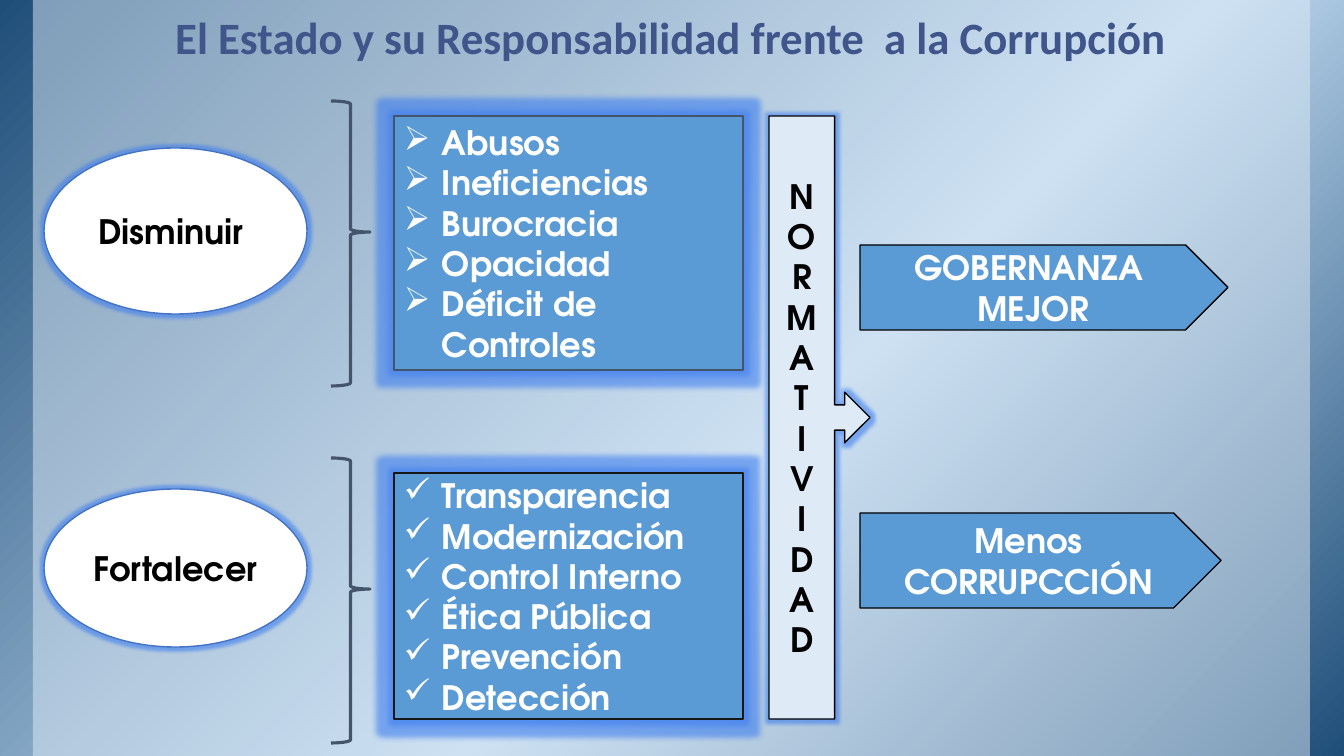
from dataclasses import dataclass

from lxml.etree import SubElement
from pptx import Presentation
from pptx.dml.color import RGBColor
from pptx.enum.shapes import MSO_SHAPE as Shape
from pptx.enum.text import MSO_ANCHOR as Anchor, PP_ALIGN as Align
from pptx.oxml import parse_xml
from pptx.oxml.ns import nsdecls, qn
from pptx.util import Pt

EMU_PER_PX = 914400 / 100.8
WIDTH, HEIGHT = 1344, 756


def px(length):
    return round(length * EMU_PER_PX)


@dataclass(frozen=True)
class Theme:
    title_font: str = "Calibri"
    body_font: str = "TeX Gyre Adventor"
    title_size: int = 32
    body_size: int = 24
    title: str = "40558A"
    navy: str = "1F4E79"
    sky: str = "BDD7EE"
    pale: str = "DEEBF7"
    blue: str = "5B9BD5"
    slate: str = "44546A"
    outline: str = "4472C4"
    glow: str = "3F7FEF"
    ink: str = "181717"
    black: str = "000000"
    white: str = "FFFFFF"


class SlideBuilder:
    def __init__(self, slide, theme):
        self.slide = slide
        self.theme = theme

    def shape(self, kind, box, fill=None, line=None, line_width=1, glow=0):
        shape = self.slide.shapes.add_shape(kind, *map(px, box))
        shape.shadow.inherit = False
        if fill:
            shape.fill.solid()
            shape.fill.fore_color.rgb = RGBColor.from_string(fill)
        else:
            shape.fill.background()
        if line:
            shape.line.color.rgb = RGBColor.from_string(line)
            shape.line.width = Pt(line_width)
        else:
            shape.line.fill.background()
        if glow:
            effects = shape._element.spPr.find(qn("a:effectLst"))
            halo = SubElement(effects, qn("a:glow"), rad=str(Pt(glow)))
            color = SubElement(halo, qn("a:srgbClr"), val=self.theme.glow)
            SubElement(color, qn("a:alpha"), val="60000")
        return shape

    def label(self, shape, text, color, bullet=None):
        """Fill a shape with bold text, centred unless it is a bulleted list."""
        frame = shape.text_frame
        frame.word_wrap = True
        frame.vertical_anchor = Anchor.MIDDLE
        frame.text = text
        for paragraph in frame.paragraphs:
            paragraph.alignment = Align.LEFT if bullet else Align.CENTER
            if bullet:
                properties = paragraph._p.get_or_add_pPr()
                properties.set("marL", str(px(38)))
                properties.set("indent", str(px(-38)))
                SubElement(properties, qn("a:buChar"), char=bullet)
            for run in paragraph.runs:
                self.style(run, self.theme.body_font, self.theme.body_size, color)

    def style(self, run, font, size, color):
        run.font.name = font
        run.font.size = Pt(size)
        run.font.bold = True
        run.font.color.rgb = RGBColor.from_string(color)

    def backdrop(self):
        theme = self.theme
        base = self.shape(Shape.RECTANGLE, (0, 0, WIDTH, HEIGHT), theme.navy)
        stops = "".join(
            f'<a:gs pos="{position}"><a:srgbClr val="{color}"/></a:gs>'
            for position, color in ((0, theme.navy), (58000, theme.sky), (100000, theme.navy)))
        gradient = parse_xml(
            f'<a:gradFill {nsdecls("a")} rotWithShape="1"><a:gsLst>{stops}</a:gsLst>'
            '<a:lin ang="2700000" scaled="0"/></a:gradFill>')
        properties = base._element.spPr
        properties.replace(properties.find(qn("a:solidFill")), gradient)
        veil = self.shape(Shape.RECTANGLE, (33, 0, 1277, HEIGHT), theme.pale)
        color = veil._element.spPr.find(qn("a:solidFill"))[0]
        SubElement(color, qn("a:alpha"), val="50000")

    def title(self, text, box):
        title = self.slide.shapes.title
        title.left, title.top, title.width, title.height = map(px, box)
        frame = title.text_frame
        frame.text = text
        frame.word_wrap = True
        frame.vertical_anchor = Anchor.TOP
        paragraph = frame.paragraphs[0]
        paragraph.alignment = Align.CENTER
        self.style(paragraph.runs[0], self.theme.title_font,
                   self.theme.title_size, self.theme.title)
        # Bring the title in front of the backdrop
        self.slide.shapes._spTree.append(title._element)

    def goal(self, text, box):
        oval = self.shape(Shape.OVAL, box, self.theme.white, self.theme.outline, glow=5)
        self.label(oval, text, self.theme.black)

    def brace(self, box):
        brace = self.shape(Shape.RIGHT_BRACE, box, line=self.theme.slate, line_width=2.25)
        brace.adjustments[0] = 0.08
        brace.adjustments[1] = 0.46

    def checklist(self, items, bullet, box, line):
        panel = self.shape(Shape.RECTANGLE, box, self.theme.blue, line, glow=8)
        self.label(panel, "\n".join(items), self.theme.white, bullet)

    def callout(self, word, box):
        callout = self.shape(Shape.RIGHT_ARROW_CALLOUT, box, self.theme.pale,
                             self.theme.black, glow=5)
        self.label(callout, "\n".join(word), self.theme.black)

    def outcome(self, text, box):
        arrow = self.shape(Shape.PENTAGON, box, self.theme.blue, self.theme.black)
        self.label(arrow, text, self.theme.white)


def main():
    presentation = Presentation()
    presentation.slide_width, presentation.slide_height = px(WIDTH), px(HEIGHT)
    theme = Theme()
    builder = SlideBuilder(
        presentation.slides.add_slide(presentation.slide_layouts[5]), theme)

    builder.backdrop()
    builder.title("El Estado y su Responsabilidad frente  a la Corrupción", (44, 5, 1254, 65))
    builder.goal("Disminuir ", (44, 148, 263, 166))
    builder.goal("Fortalecer ", (44, 489, 263, 158))
    for top in (101, 458):
        builder.brace((331, top, 39, 285))
    builder.checklist(
        ("Transparencia", "Modernización", "Control Interno",
         "Ética Pública", "Prevención", "Detección"),
        "✓", (394, 473, 349, 246), theme.ink)
    builder.checklist(
        ("Abusos", "Ineficiencias", "Burocracia", "Opacidad", "Déficit de Controles"),
        "➢", (394, 116, 349, 254), theme.slate)
    builder.callout("NORMATIVIDAD", (769, 116, 101, 603))
    builder.outcome("GOBERNANZA \nMEJOR", (860, 245, 368, 85))
    builder.outcome("Menos\nCORRUPCCIÓN", (860, 513, 361, 95))

    presentation.save("out.pptx")


if __name__ == "__main__":
    main()
